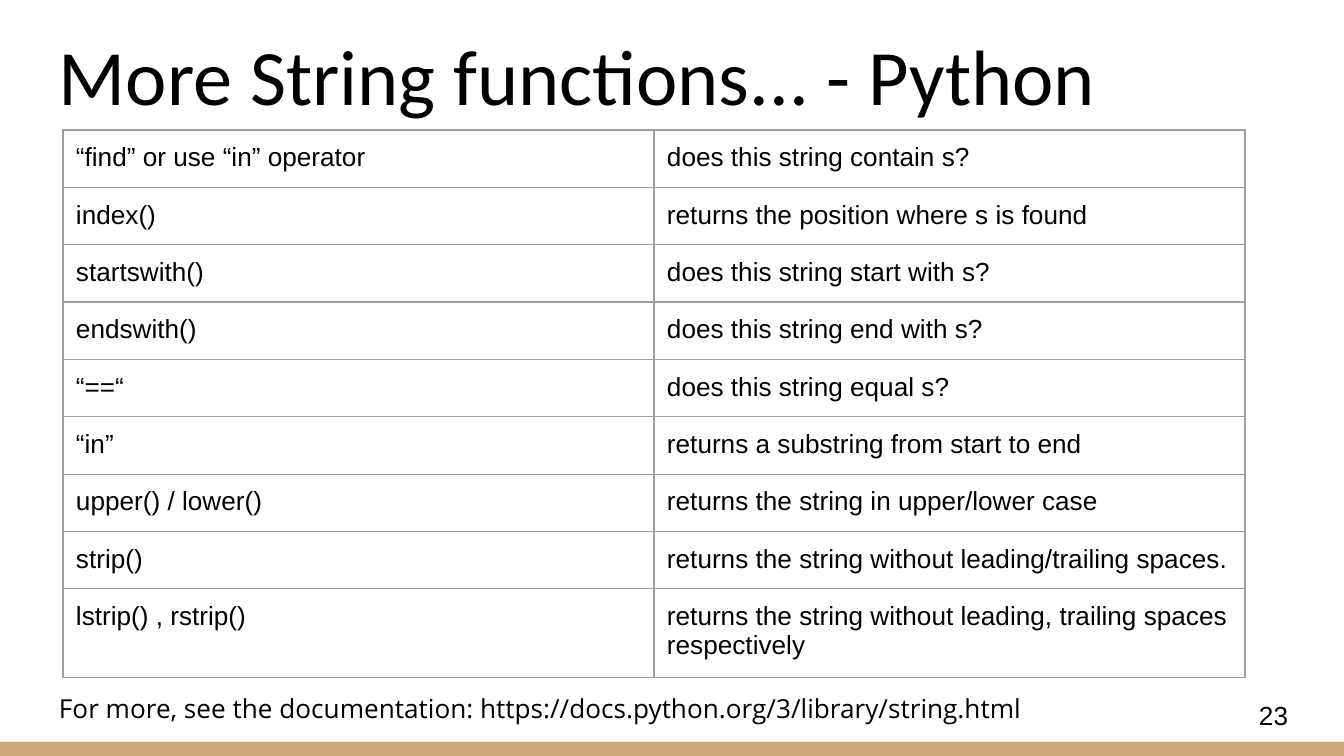
from lxml import etree
from pptx import Presentation
from pptx import util as u
from pptx.dml.color import RGBColor
from pptx.enum import shapes, text
from pptx.oxml import ns

SCALE = 914400 / 134.4  # EMU per px
INSET = 13
BLACK, GREY, TAN = "000000", "9E9E9E", "CCA677"

FUNCTIONS = [
    ("“find” or use “in” operator", "does this string contain s?"),
    ("index()", "returns the position where s is found"),
    ("startswith()", "does this string start with s?"),
    ("endswith()", "does this string end with s?"),
    ("“==“", "does this string equal s?"),
    ("“in”", "returns a substring from start to end"),
    ("upper() / lower()", "returns the string in upper/lower case"),
    ("strip()", "returns the string without leading/trailing spaces."),
    ("lstrip() , rstrip()",
     "returns the string without leading, trailing spaces respectively"),
]


def px(length):
    return u.Emu(round(length * SCALE))


def color(value):
    return RGBColor.from_string(value)


class SlideBuilder:
    def __init__(self, slide, font="Arial", size=14):
        self.slide = slide
        self.font = font
        self.size = size

    def add_text(self, paragraph, words, font=None, size=None):
        run = paragraph.add_run()
        run.text = words
        run.font.name = font or self.font
        run.font.size = u.Pt(size or self.size)
        run.font.color.rgb = color(BLACK)

    def bar(self, left, top, width, height, fill):
        shape = self.slide.shapes.add_shape(
            shapes.MSO_SHAPE.RECTANGLE, *map(px, (left, top, width, height)))
        shape.shadow.inherit = False
        shape.fill.solid()
        shape.fill.fore_color.rgb = color(fill)
        shape.line.fill.background()

    def label(self, left, top, width, height, words, anchor, font=None, size=None):
        box = self.slide.shapes.add_textbox(*map(px, (left, top, width, height)))
        frame = box.text_frame
        frame.word_wrap = True
        frame.vertical_anchor = anchor
        frame.margin_left = frame.margin_right = px(INSET)
        frame.margin_top = frame.margin_bottom = px(INSET)
        self.add_text(frame.paragraphs[0], words, font, size)

    def border(self, cell):
        properties = cell._tc.get_or_add_tcPr()
        for position, side in enumerate(("lnL", "lnR", "lnT", "lnB")):
            line = etree.Element(ns.qn("a:" + side), w=str(u.Pt(0.75)))
            fill = etree.SubElement(line, ns.qn("a:solidFill"))
            etree.SubElement(fill, ns.qn("a:srgbClr"), val=GREY)
            properties.insert(position, line)

    def table(self, left, top, column_width, row_heights, rows):
        columns = len(rows[0])
        table = self.slide.shapes.add_table(
            len(rows), columns, px(left), px(top),
            px(column_width * columns), px(sum(row_heights))).table
        table.first_row = table.horz_banding = False
        for column in table.columns:
            column.width = px(column_width)
        for row, height, values in zip(table.rows, row_heights, rows):
            row.height = px(height)
            for cell, words in zip(row.cells, values):
                cell.fill.background()
                cell.margin_left = cell.margin_right = px(INSET)
                cell.margin_top = cell.margin_bottom = px(INSET)
                self.add_text(cell.text_frame.paragraphs[0], words)
                self.border(cell)


def main():
    presentation = Presentation()
    presentation.slide_width, presentation.slide_height = px(1344), px(756)
    slide = presentation.slides.add_slide(presentation.slide_layouts[6])
    builder = SlideBuilder(slide)

    # Bottom band
    builder.bar(0, 742, 1344, 14, TAN)

    # Title
    builder.label(46, 12, 1252, 122, "More String functions... - Python",
                  text.MSO_ANCHOR.BOTTOM, "Calibri", 42)

    # Documentation note and slide number
    builder.label(
        46, 679, 1180, 60,
        "For more, see the documentation: https://docs.python.org/3/library/string.html",
        text.MSO_ANCHOR.TOP, "Open Sans")
    builder.label(1246, 686, 80, 58, "23", text.MSO_ANCHOR.MIDDLE)

    # Function table: the last row holds two lines
    heights = [56] * (len(FUNCTIONS) - 1) + [86]
    builder.table(63, 130, 591, heights, FUNCTIONS)

    presentation.save("out.pptx")


if __name__ == "__main__":
    main()
